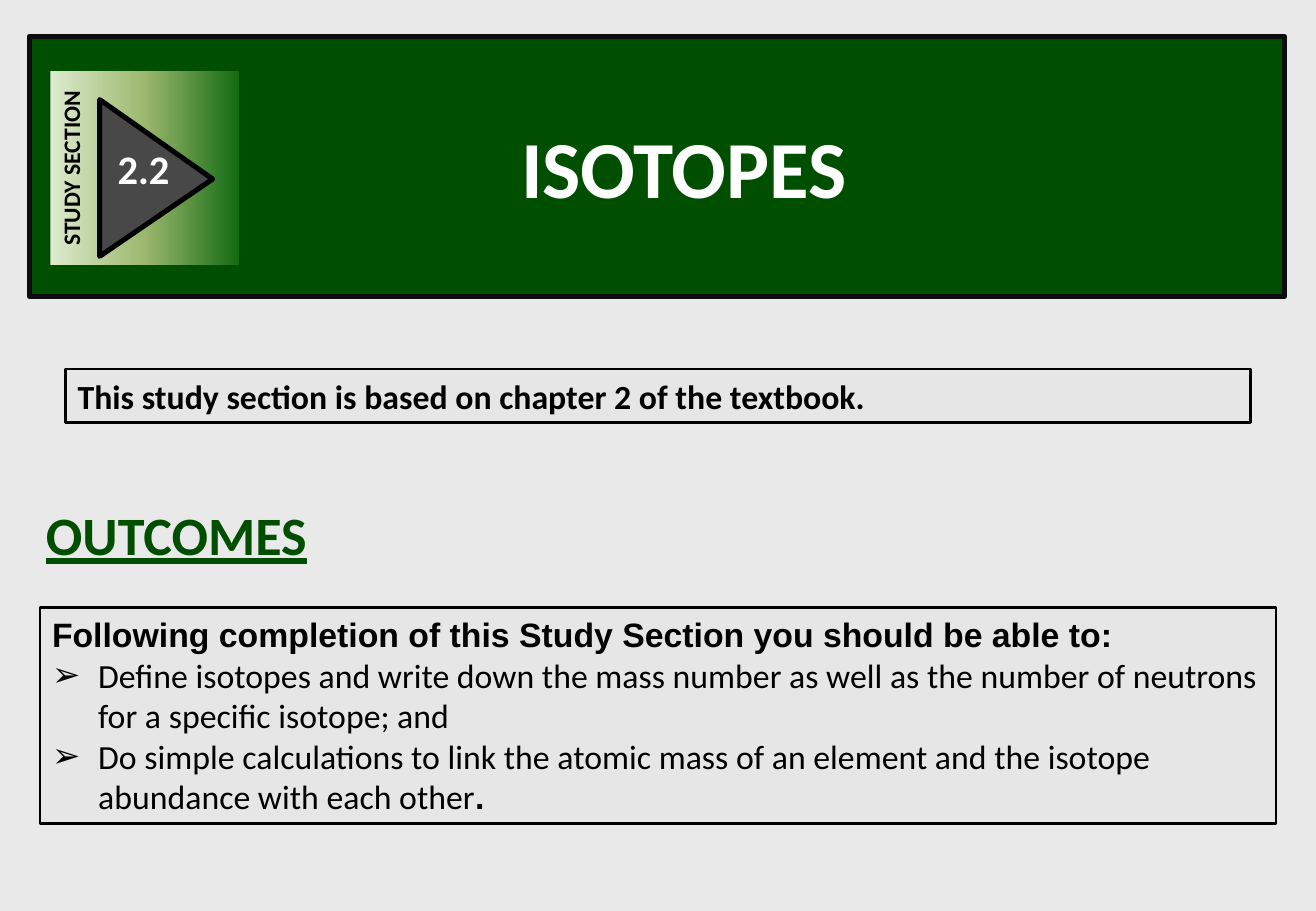
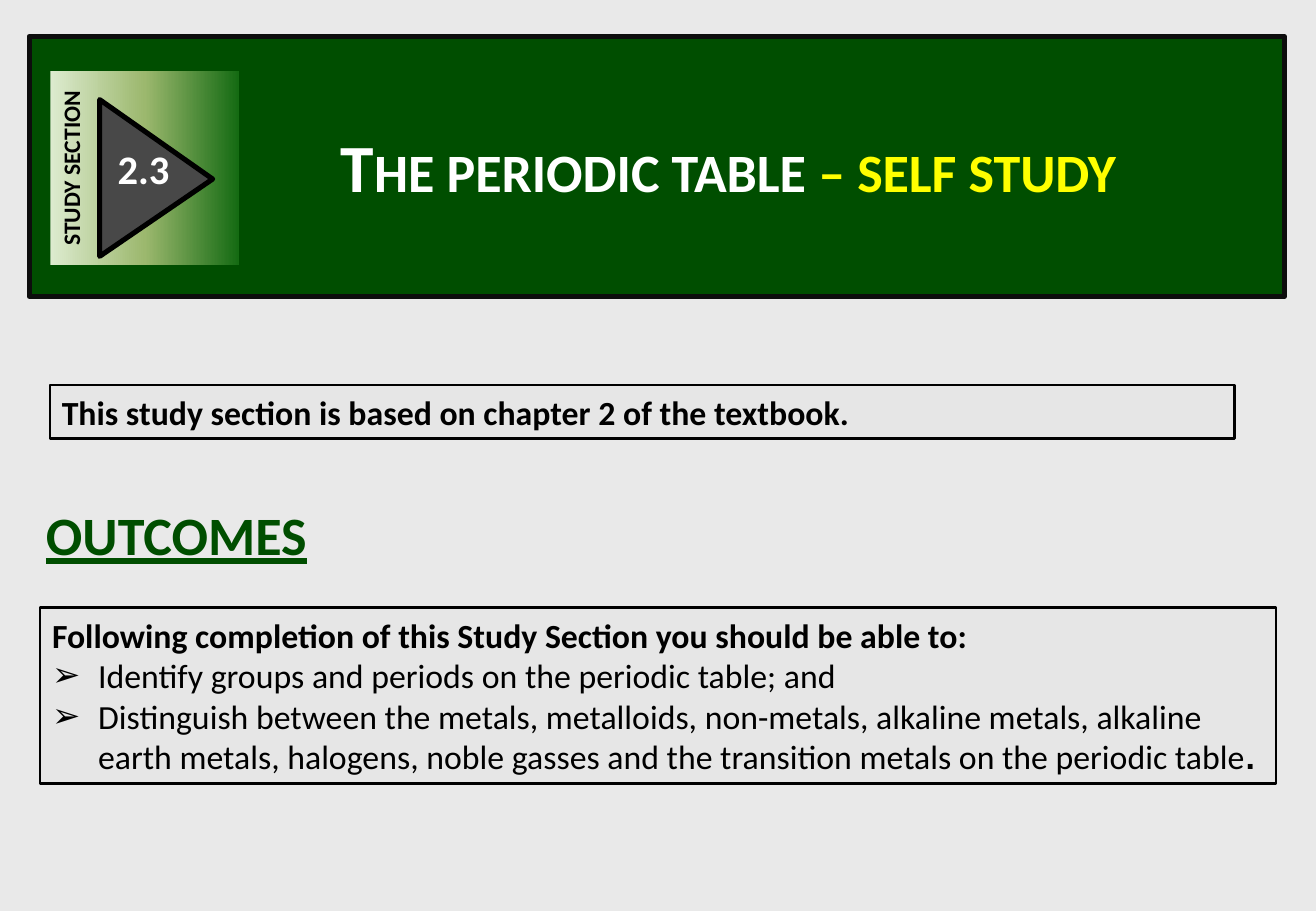
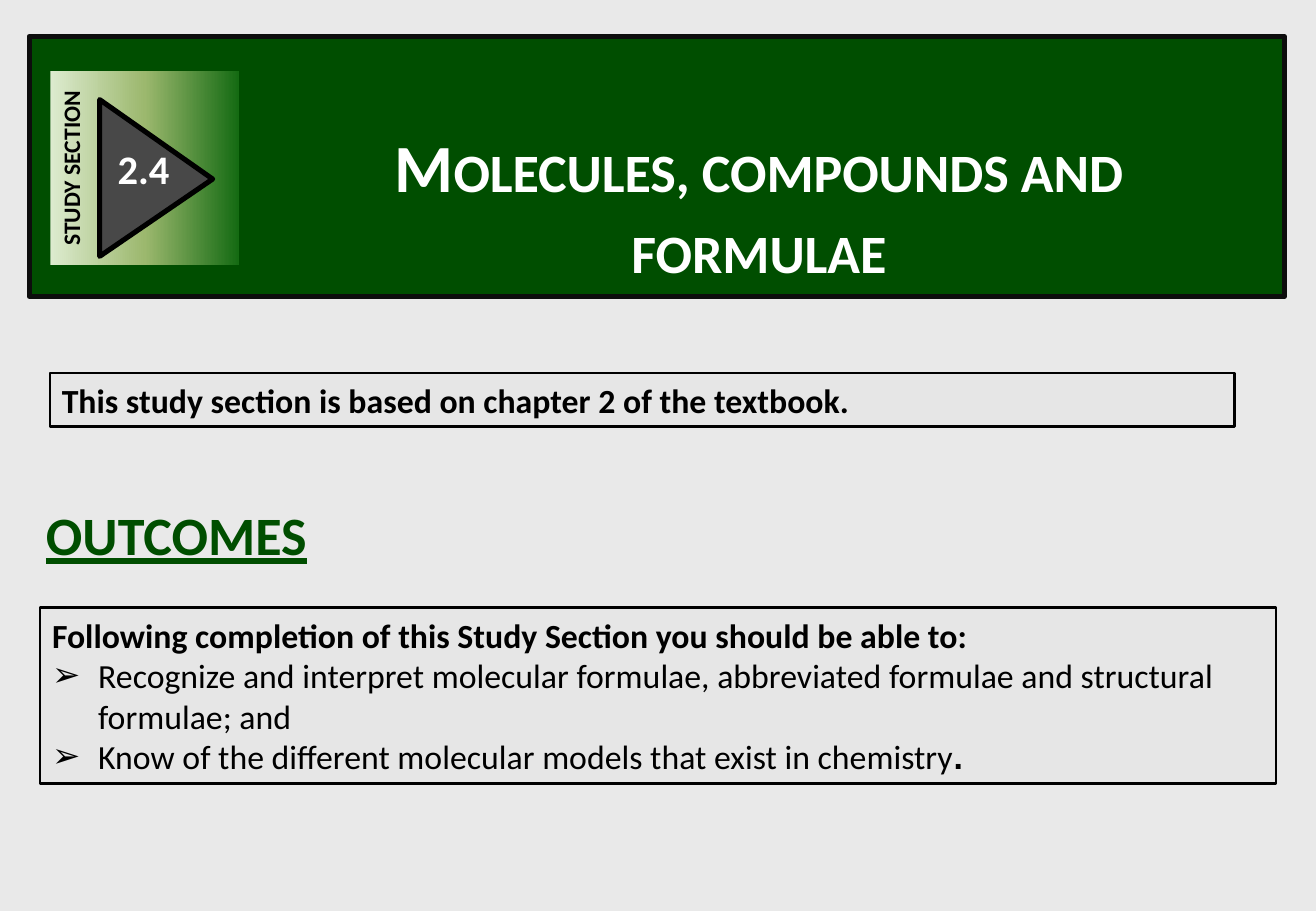
from copy import deepcopy

from lxml import etree
from pptx import Presentation
from pptx.dml.color import RGBColor
from pptx.enum.shapes import MSO_SHAPE as SHAPE
from pptx.enum.text import MSO_ANCHOR as ANCHOR, MSO_AUTO_SIZE as AUTO, PP_ALIGN as ALIGN
from pptx.oxml.ns import qn
from pptx.util import Inches, Pt

COLORS = {
    "background": "E9E9E9", "green": "004E00", "banner_line": "0D0D0D",
    "panel": "E6E6E6", "black": "000000", "white": "FFFFFF",
    "yellow": "FFFF00", "grey": "484848",
    "fade_start": "DDEBCF", "fade_middle": "9CB86E", "fade_end": "156B13",
}
RGB = {name: RGBColor.from_string(value) for name, value in COLORS.items()}

BODY = {"name": "Calibri", "size": Pt(20), "bold": False}
STRONG = {**BODY, "bold": True}
STRONG_ARIAL = {**STRONG, "name": "Arial"}
TITLE = {**STRONG, "size": Pt(40)}
BIG_TITLE = {**STRONG, "size": Pt(60)}
NUMBER = {**STRONG, "size": Pt(24)}
TAB = {**STRONG, "size": Pt(14)}
HEADING = {**STRONG, "size": Pt(32), "underline": True}

BULLET_INDENT = Inches(0.38)
BASIS = "This study section is based on chapter 2 of the textbook."
LEAD_IN = "Following completion of this Study Section you should be able to:"

SECTIONS = [
    {
        "number": "2.2",
        "title": [("isotopes", BIG_TITLE, "white")],
        "title_at": (3.26, 0.75, 4.74, 1.11),
        "basis_at": (0.54, 3.04, 9.75, 0.44),
        "outcomes_height": 1.78,
        "lead_in_style": STRONG_ARIAL,
        "outcomes": [
            "Define isotopes and write down the mass number as well as the number "
            "of neutrons for a specific isotope; and",
            "Do simple calculations to link the atomic mass of an element and the "
            "isotope abundance with each other",
        ],
    },
    {
        "number": "2.3",
        "title": [("The periodic table ", TITLE, "white"), ("– self study", TITLE, "yellow")],
        "title_at": (2.33, 0.98, 7.33, 0.77),
        "basis_at": (0.41, 3.17, 9.75, 0.44),
        "outcomes_height": 1.45,
        "lead_in_style": STRONG,
        "outcomes": [
            "Identify groups and periods on the periodic table; and",
            "Distinguish between the metals, metalloids, non-metals, alkaline metals, "
            "alkaline earth metals, halogens, noble gasses and the transition metals "
            "on the periodic table",
        ],
    },
    {
        "number": "2.4",
        "title": [("Molecules, compounds and formulae", TITLE, "white")],
        "title_at": (2.08, 0.98, 8.33, 1.45),
        "basis_at": (0.41, 3.07, 9.75, 0.44),
        "outcomes_height": 1.45,
        "lead_in_style": STRONG,
        "outcomes": [
            "Recognize and interpret molecular formulae, abbreviated formulae and "
            "structural formulae; and",
            "Know of the different molecular models that exist in chemistry",
        ],
    },
]


def add_box(shapes, at, kind=None, fill=None, line=None, width=1.5):
    """Add a preset shape, or a text box when no kind is given."""
    at = [Inches(v) for v in at]
    if kind is None:
        sp = shapes.add_textbox(*at)
    else:
        sp = shapes.add_shape(kind, *at)
        sp.shadow.inherit = False
        if fill:
            sp.fill.solid()
            sp.fill.fore_color.rgb = RGB[fill]
        if line:
            sp.line.color.rgb = RGB[line]
            sp.line.width = Pt(width)
        else:
            sp.line.fill.background()
    return sp


def write(sp, paragraphs, align=ALIGN.LEFT, anchor=ANCHOR.TOP, wrap=True):
    """Fill a shape with paragraphs, each a list of (text, style, colour) runs."""
    tf = sp.text_frame
    tf.word_wrap, tf.vertical_anchor, tf.auto_size = wrap, anchor, AUTO.SHAPE_TO_FIT_TEXT
    for i, runs in enumerate(paragraphs):
        p = tf.paragraphs[0] if i == 0 else tf.add_paragraph()
        p.alignment = align
        for text, style, color in runs:
            r = p.add_run()
            r.text = text
            for name, value in style.items():
                setattr(r.font, name, value)
            r.font.color.rgb = RGB[color]
    return tf


prs = Presentation()
prs.slide_width, prs.slide_height = Inches(10.83), Inches(7.5)

for section in SECTIONS:
    s = prs.slides.add_slide(prs.slide_layouts[6])
    s.background.fill.solid()
    s.background.fill.fore_color.rgb = RGB["background"]

    # Banner with the section title
    group = s.shapes.add_group_shape().shapes
    banner = add_box(group, (0.24, 0.3, 10.33, 2.14), SHAPE.RECTANGLE,
                     "green", "banner_line", 3)
    title = add_box(group, section["title_at"])
    tf = write(title, [section["title"]], ALIGN.CENTER)
    for r in tf.paragraphs[0].runs:
        r.font._element.set("cap", "small")

    # Section marker: fading tab, arrow and number
    tab = add_box(group, (0.39, 0.61, 1.6, 1.55), SHAPE.RECTANGLE)
    tab.rotation = 270
    tab.fill.gradient()
    tab.fill.gradient_angle = 270
    stop_list = tab._element.spPr.find(".//" + qn("a:gsLst"))
    stop_list.append(deepcopy(stop_list[-1]))
    fade = ((0, "fade_start"), (0.5, "fade_middle"), (1, "fade_end"))
    for stop, (position, color) in zip(tab.fill.gradient_stops, fade):
        stop.position = position
        stop.color.rgb = RGB[color]
    write(tab, [[("STUDY SECTION", TAB, "black")]], ALIGN.CENTER)

    arrow = add_box(group, (0.64, 1, 1.29, 0.93), SHAPE.ISOSCELES_TRIANGLE,
                    "grey", "black", 3)
    arrow.rotation = 90
    arrow.adjustments[0] = 0.507
    for sp in (banner, arrow):
        etree.SubElement(sp._element.spPr.find(qn("a:ln")), qn("a:round"))
    number = add_box(group, (0.87, 1.14, 0.63, 0.51))
    write(number, [[(section["number"], NUMBER, "white")]], wrap=False)

    # Outcomes
    heading = add_box(s.shapes, (0.28, 4.08, 2.89, 0.64))
    write(heading, [[("OUTCOMES", HEADING, "green")]])

    paragraphs = [[(LEAD_IN, section["lead_in_style"], "black")]]
    paragraphs += [[(text, BODY, "black")] for text in section["outcomes"]]
    paragraphs[-1].append((".", STRONG_ARIAL, "black"))
    outcomes = add_box(s.shapes, (0.33, 5, 10.17, section["outcomes_height"]),
                       SHAPE.RECTANGLE, "panel", "black")
    tf = write(outcomes, paragraphs, anchor=ANCHOR.MIDDLE)
    for p in tf.paragraphs[1:]:
        pPr = p._p.get_or_add_pPr()
        pPr.set("marL", str(BULLET_INDENT))
        pPr.set("indent", str(-BULLET_INDENT))
        etree.SubElement(pPr, qn("a:buFont")).set("typeface", "Arial")
        etree.SubElement(pPr, qn("a:buChar")).set("char", "➢")

    # Textbook reference
    basis = add_box(s.shapes, section["basis_at"], SHAPE.RECTANGLE, "panel", "black")
    write(basis, [[(BASIS, STRONG, "black")]], anchor=ANCHOR.MIDDLE)

prs.save("out.pptx")
